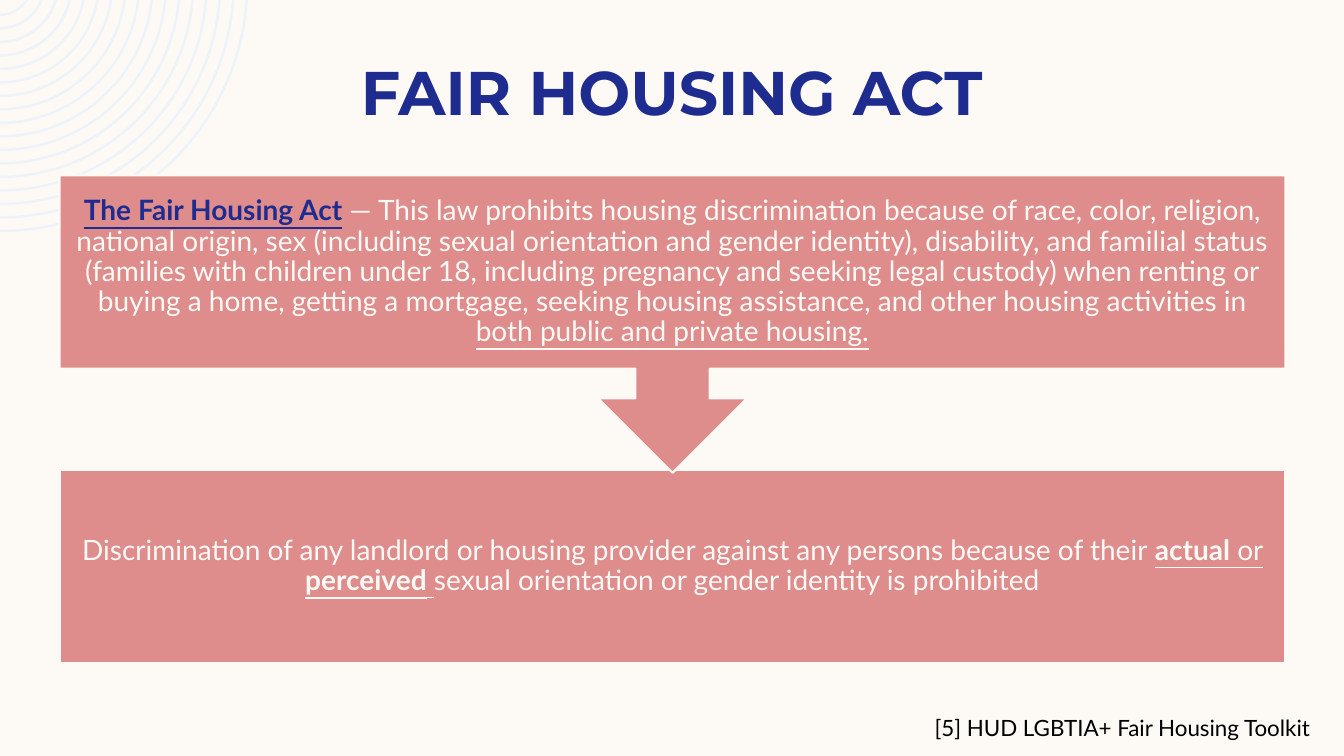
from math import asin, cos, pi, sin, tan

from pptx import Presentation
from pptx import util as u
from pptx.dml.color import RGBColor
from pptx.enum import shapes, text
from pptx.oxml import ns, xmlchemy as xml

CREAM, ROSE, NAVY, PALE, BLACK = "FDFAF6", "DE8C8C", "1F2C8F", "EEF3FA", "000000"


def tint(code):
    return RGBColor.from_string(code)


def arc(radius, rise):
    """Bezier points from the slide's top edge to its left edge."""
    start = asin(rise / radius)
    pull = radius * 4 / 3 * tan((pi / 2 - start) / 4)
    spots = [
        (radius * cos(start), radius * sin(start)),
        (radius * cos(start) - pull * sin(start), radius * sin(start) + pull * cos(start)),
        (pull, radius),
        (0, radius),
    ]
    return [(u.Inches(x), u.Inches(y - rise)) for x, y in spots]


def bend(shape):
    """Turn the line triples of each ring into curves."""
    lines = list(shape._element.iter(ns.qn("a:lnTo")))
    for i in range(0, len(lines), 7):
        for trio in (lines[i:i + 3], lines[i + 4:i + 7]):
            curve = xml.OxmlElement("a:cubicBezTo")
            trio[0].addprevious(curve)
            for line in trio:
                curve.append(line[0])
                line.getparent().remove(line)


class Page:
    body = "Lato"
    head = "Montserrat"

    def __init__(self, deck):
        self.slide = deck.slides.add_slide(deck.slide_layouts[6])
        self.shapes = self.slide.shapes
        fill = self.slide.background.fill
        fill.solid()
        fill.fore_color.rgb = tint(CREAM)

    def paint(self, shape, color, edge=None):
        shape.shadow.inherit = False
        shape.fill.solid()
        shape.fill.fore_color.rgb = tint(color)
        if edge:
            shape.line.color.rgb = tint(edge)
            shape.line.width = u.Pt(1.5)
        else:
            shape.line.fill.background()

    def block(self, kind, box, turn=0):
        shape = self.shapes.add_shape(kind, *map(u.Inches, box))
        shape.rotation = turn
        self.paint(shape, ROSE, CREAM)

    def rings(self, count, rise, first, step, width):
        """Draw rings cut by the slide corner, centred `rise` above it."""
        pen = None
        for i in range(count):
            outer = first + i * step
            points = arc(outer, rise) + arc(outer - width, rise)[::-1]
            if pen is None:
                pen = self.shapes.build_freeform(*points[0])
            else:
                pen.move_to(*points[0])
            pen.add_line_segments(points[1:], close=True)
        shape = pen.convert_to_shape()
        bend(shape)
        self.paint(shape, PALE)

    def text(self, box, runs, size, font=body, align=text.PP_ALIGN.CENTER,
             anchor=text.MSO_ANCHOR.TOP, inset=None, lines=None):
        """Each run is (words, color, bold, underline)."""
        frame = self.shapes.add_textbox(*map(u.Inches, box)).text_frame
        frame.word_wrap = True
        frame.vertical_anchor = anchor
        if inset is not None:
            frame.margin_left = frame.margin_right = u.Inches(inset)
            frame.margin_top = frame.margin_bottom = u.Inches(inset)
        para = frame.paragraphs[0]
        para.alignment = align
        if lines:
            para.line_spacing = lines
        for words, color, bold, under in runs:
            run = para.add_run()
            run.text = words
            run.font.name, run.font.size = font, u.Pt(size)
            run.font.bold, run.font.underline = bold, under
            run.font.color.rgb = tint(color)

    def panel(self, box, runs):
        self.text(box, runs, 20, anchor=text.MSO_ANCHOR.MIDDLE, inset=0.16, lines=0.9)


def main():
    deck = Presentation()
    deck.slide_width, deck.slide_height = u.Inches(13.33), u.Inches(7.5)
    page = Page(deck)
    page.rings(count=17, rise=0.16, first=0.32, step=0.134, width=0.025)
    page.text((0.83, 0.49, 11.67, 0.84), [("FAIR HOUSING ACT", NAVY, True, False)],
              44, Page.head)

    left, width, tall = 0.59, 12.16, 1.92
    law, ban = (left, 1.74, width, tall), (left, 4.66, width, tall)
    page.block(shapes.MSO_SHAPE.RECTANGLE, ban)
    page.panel(ban, [
        ("Discrimination of any landlord or housing provider against any persons "
         "because of their ", CREAM, False, False),
        ("actual", CREAM, True, True),
        (" or ", CREAM, False, True),
        ("perceived", CREAM, True, True),
        (" ", CREAM, False, True),
        ("sexual orientation or gender identity is prohibited", CREAM, False, False),
    ])
    page.block(shapes.MSO_SHAPE.UP_ARROW_CALLOUT, (left, 1.74, width, 2.95), 180)
    page.panel(law, [
        ("The Fair Housing Act", NAVY, True, True),
        (" — This law prohibits housing discrimination because of race, color, "
         "religion, national origin, sex (including sexual orientation and gender "
         "identity), disability, and familial status (families with children under "
         "18, including pregnancy and seeking legal custody) when renting or buying "
         "a home, getting a mortgage, seeking housing assistance, and other housing "
         "activities in ", CREAM, False, False),
        ("both public and private housing.", CREAM, False, True),
    ])
    page.text((9.17, 7.04, 4.72, 0.64),
              [("[5] HUD LGBTIA+ Fair Housing Toolkit", BLACK, False, False)],
              16, align=text.PP_ALIGN.LEFT)
    deck.save("out.pptx")


if __name__ == "__main__":
    main()
